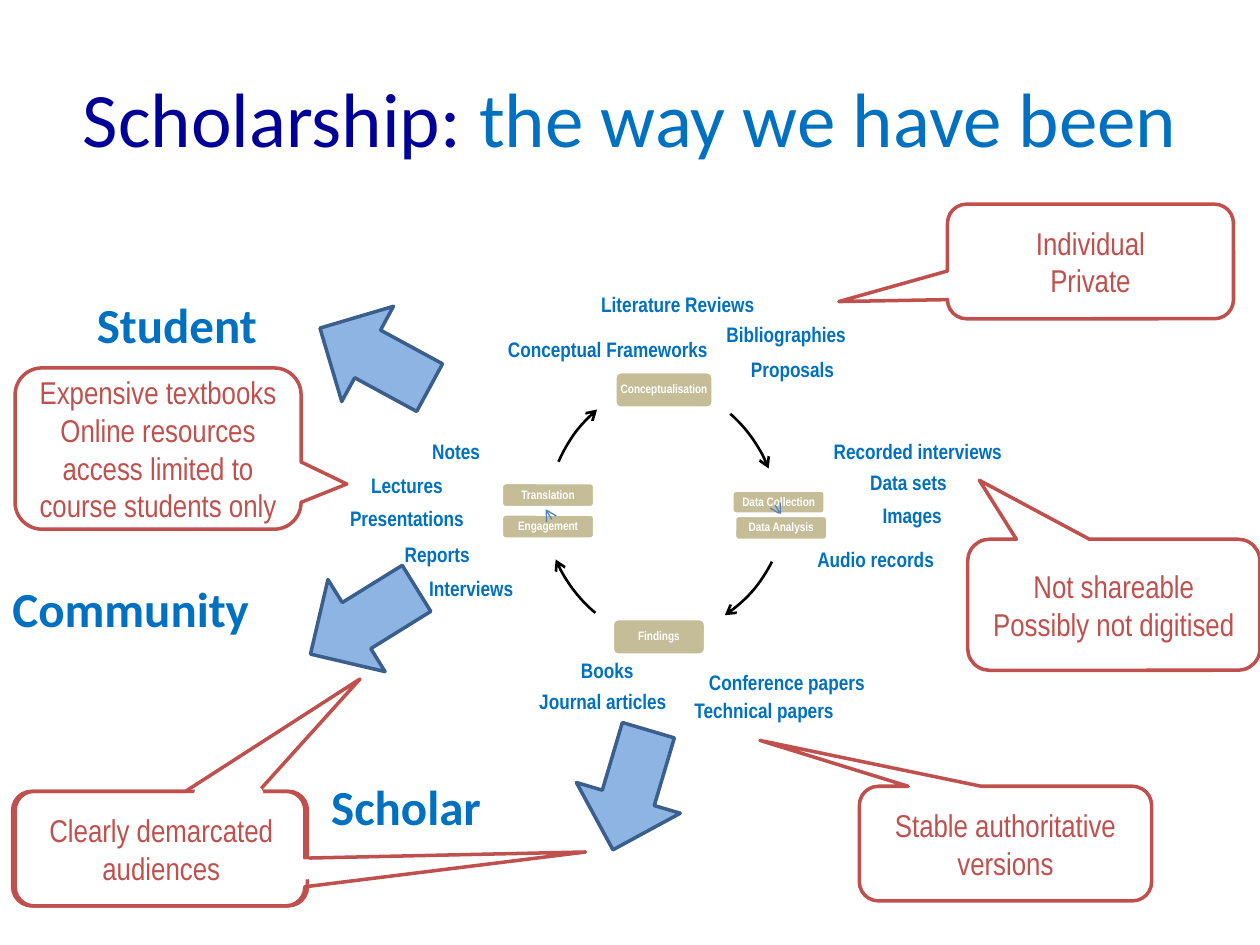
from dataclasses import dataclass
from typing import NamedTuple

from lxml import etree
from pptx import Presentation
from pptx.dml.color import RGBColor
from pptx.enum.shapes import MSO_SHAPE
from pptx.enum.text import MSO_ANCHOR, MSO_AUTO_SIZE, PP_ALIGN
from pptx.oxml.ns import qn
from pptx.util import Inches, Pt

ROUND = MSO_SHAPE.ROUNDED_RECTANGLE
CALLOUT = MSO_SHAPE.ROUNDED_RECTANGULAR_CALLOUT
BLOCK = MSO_SHAPE.RIGHT_ARROW
OVAL = MSO_SHAPE.OVAL
ARC = MSO_SHAPE.ARC
MIDDLE = MSO_ANCHOR.MIDDLE
GROW = MSO_AUTO_SIZE.SHAPE_TO_FIT_TEXT
LEFT, CENTER = PP_ALIGN.LEFT, PP_ALIGN.CENTER


@dataclass(frozen=True)
class Theme:
    navy: str = "000099"
    blue: str = "0070C0"
    tan: str = "C4BD97"
    sky: str = "8EB4E3"
    steel: str = "3A5F8C"
    pale: str = "4F81BD"
    red: str = "C0504D"
    white: str = "FFFFFF"
    black: str = "000000"
    head: str = "Calibri"
    body: str = "Arial Narrow"
    title: float = 44
    group: float = 28
    note: float = 18
    label: float = 12
    stage: float = 7


class Box(NamedTuple):
    x: float
    y: float
    w: float
    h: float


class Item(NamedTuple):
    text: str
    box: Box


class Note(NamedTuple):
    text: str
    box: Box
    tip: tuple[float, float]


class Curve(NamedTuple):
    x: float
    y: float
    start: float
    end: float
    color: str
    width: float


class Block(NamedTuple):
    x: float
    y: float
    turn: float


THEME = Theme()
RING = 2.27

STAGES = [
    Item("Conceptualisation", Box(4.88, 2.95, 0.78, 0.29)),
    Item("Data Collection", Box(5.81, 3.89, 0.74, 0.19)),
    Item("Data Analysis", Box(5.83, 4.09, 0.74, 0.2)),
    Item("Findings", Box(4.86, 4.91, 0.74, 0.29)),
    Item("Engagement", Box(3.98, 4.08, 0.74, 0.2)),
    Item("Translation", Box(3.98, 3.83, 0.74, 0.2)),
]
CURVES = [
    Curve(3.91, 3, 311.5, 338.5, THEME.black, 1.5),
    Curve(4.08, 3.52, 329.5, 330.2, THEME.pale, 0.75),
    Curve(3.98, 2.81, 26.9, 55.8, THEME.black, 1.5),
    Curve(4.32, 2.86, 130, 156.9, THEME.black, 1.5),
    Curve(4.18, 2.34, 148.3, 150.2, THEME.pale, 0.75),
    Curve(4.34, 2.98, 203.3, 229.6, THEME.black, 1.5),
]
LABELS = [
    Item("Conceptual Frameworks", Box(3.8, 2.65, 2.05, 0.24)),
    Item("Literature Reviews", Box(4.66, 2.29, 1.44, 0.24)),
    Item("Bibliographies", Box(5.65, 2.53, 1.18, 0.24)),
    Item("Proposals", Box(5.7, 2.81, 1.18, 0.24)),
    Item("Data sets", Box(6.62, 3.71, 1.18, 0.24)),
    Item("Conference papers", Box(5.47, 5.29, 1.55, 0.24)),
    Item("Audio records", Box(6.36, 4.32, 1.18, 0.24)),
    Item("Images", Box(6.65, 3.97, 1.18, 0.24)),
    Item("Recorded interviews", Box(6.42, 3.46, 1.73, 0.24)),
    Item("Books", Box(4.23, 5.2, 1.18, 0.24)),
    Item("Reports", Box(2.88, 4.28, 1.18, 0.24)),
    Item("Journal articles", Box(4.1, 5.44, 1.37, 0.25)),
    Item("Technical papers", Box(5.28, 5.52, 1.57, 0.24)),
    Item("Notes", Box(3.03, 3.46, 1.18, 0.24)),
    Item("Presentations", Box(2.64, 3.99, 1.18, 0.24)),
    Item("Lectures", Box(2.64, 3.73, 1.18, 0.24)),
    Item("Interviews", Box(3.15, 4.55, 1.18, 0.24)),
]
BLOCKS = [Block(2.48, 2.41, 208.5), Block(2.39, 4.5, 148.2), Block(4.51, 5.84, 106.5)]
GROUPS = [
    Item("Student", Box(0.67, 2.29, 1.56, 0.57)),
    Item("Community", Box(0, 4.54, 2.21, 0.57)),
    Item("Scholar", Box(2.53, 6.11, 1.56, 0.57)),
]
NOTES = [
    Note("Individual\nPrivate", Box(7.52, 1.62, 2.27, 0.91), (-0.88, 0.35)),
    Note("Not shareable\nPossibly not digitised", Box(7.68, 4.28, 2.32, 1.04), (-0.46, -0.95)),
    Note("Stable authoritative versions", Box(6.82, 6.24, 2.32, 0.91), (-0.84, -0.9)),
    Note("Clearly demarcated audiences", Box(0.12, 6.28, 2.32, 0.91), (0.68, -1.48)),
    Note("", Box(0.1, 6.28, 2.32, 0.91), (1.46, 0.03)),
    Note("Expensive textbooks\nOnline resources access limited to course students only",
         Box(0.12, 2.92, 2.27, 1.28), (0.66, 0.22)),
]
MASKS = [Box(1.54, 6.19, 0.55, 0.21), Box(2.33, 6.82, 0.2, 0.16)]


def write(frame, text: str, *, size: float, color: str, font: str = THEME.body,
          bold: bool = False, align=CENTER, wrap: bool = True, add: bool = False) -> None:
    frame.word_wrap = wrap
    for i, line in enumerate(text.split("\n")):
        para = frame.paragraphs[-1] if add or i == 0 else frame.add_paragraph()
        para.alignment = align
        run = para.add_run()
        run.text = line
        run.font.size, run.font.name, run.font.bold = Pt(size), font, bold
        run.font.color.rgb = RGBColor.from_string(color)


def draw(slide, kind, box: Box, *, fill: str = "", line: str = "", width: float = 2):
    shape = slide.shapes.add_shape(kind, *map(Inches, box))
    shape.shadow.inherit = False
    for part, color in ((shape.fill, fill), (shape.line.fill, line)):
        if color:
            part.solid()
            part.fore_color.rgb = RGBColor.from_string(color)
        else:
            part.background()
    if line:
        shape.line.width = Pt(width)
    shape.text_frame.vertical_anchor = MIDDLE
    return shape


def draw_stage(slide, item: Item) -> None:
    frame = draw(slide, ROUND, item.box, fill=THEME.tan, line=THEME.white).text_frame
    frame.margin_left = frame.margin_right = Inches(0.03)
    frame.margin_top = frame.margin_bottom = Inches(0.03)
    write(frame, item.text, size=THEME.stage, color=THEME.white, bold=True, wrap=False)
    frame.paragraphs[0].line_spacing = 0.9


def draw_curve(slide, curve: Curve) -> None:
    box = Box(curve.x, curve.y, RING, RING)
    shape = draw(slide, ARC, box, line=curve.color, width=curve.width)
    for i, angle in enumerate((curve.start, curve.end)):
        shape.adjustments[i] = angle * 0.6
    edge = shape.element.spPr.find(qn("a:ln"))
    etree.SubElement(edge, qn("a:tailEnd"), type="arrow")


def draw_note(slide, note: Note) -> None:
    shape = draw(slide, CALLOUT, note.box, line=THEME.red)
    for i, value in enumerate(note.tip):
        shape.adjustments[i] = value
    if note.text:
        write(shape.text_frame, note.text, size=THEME.note, color=THEME.red)


def main() -> None:
    deck = Presentation()
    deck.slide_width, deck.slide_height = Inches(10), Inches(7.5)
    slide = deck.slides.add_slide(deck.slide_layouts.get_by_name("Title Only"))
    title = slide.shapes.title
    title.left, title.top, title.width, title.height = map(Inches, Box(0.5, 0.3, 9, 1.25))
    title.text_frame.vertical_anchor = MIDDLE
    for text, color in (("Scholarship: ", THEME.navy), ("the way we have been", THEME.blue)):
        write(title.text_frame, text, size=THEME.title, color=color, font=THEME.head, add=True)
    for stage, curve in zip(STAGES, CURVES):
        draw_stage(slide, stage)
        draw_curve(slide, curve)
    for item in LABELS:
        frame = draw(slide, ROUND, item.box).text_frame
        write(frame, item.text, size=THEME.label, color=THEME.blue, bold=True)
    for block in BLOCKS:
        box = Box(block.x, block.y, 0.99, 0.86)
        draw(slide, BLOCK, box, fill=THEME.sky, line=THEME.steel).rotation = block.turn
    for item in GROUPS:
        frame = slide.shapes.add_textbox(*map(Inches, item.box)).text_frame
        frame.auto_size = GROW
        write(frame, item.text, size=THEME.group, color=THEME.blue, font=THEME.head,
              bold=True, align=LEFT)
    for note in NOTES:
        draw_note(slide, note)
    for box in MASKS:
        draw(slide, OVAL, box, fill=THEME.white)
    deck.save("out.pptx")


if __name__ == "__main__":
    main()
